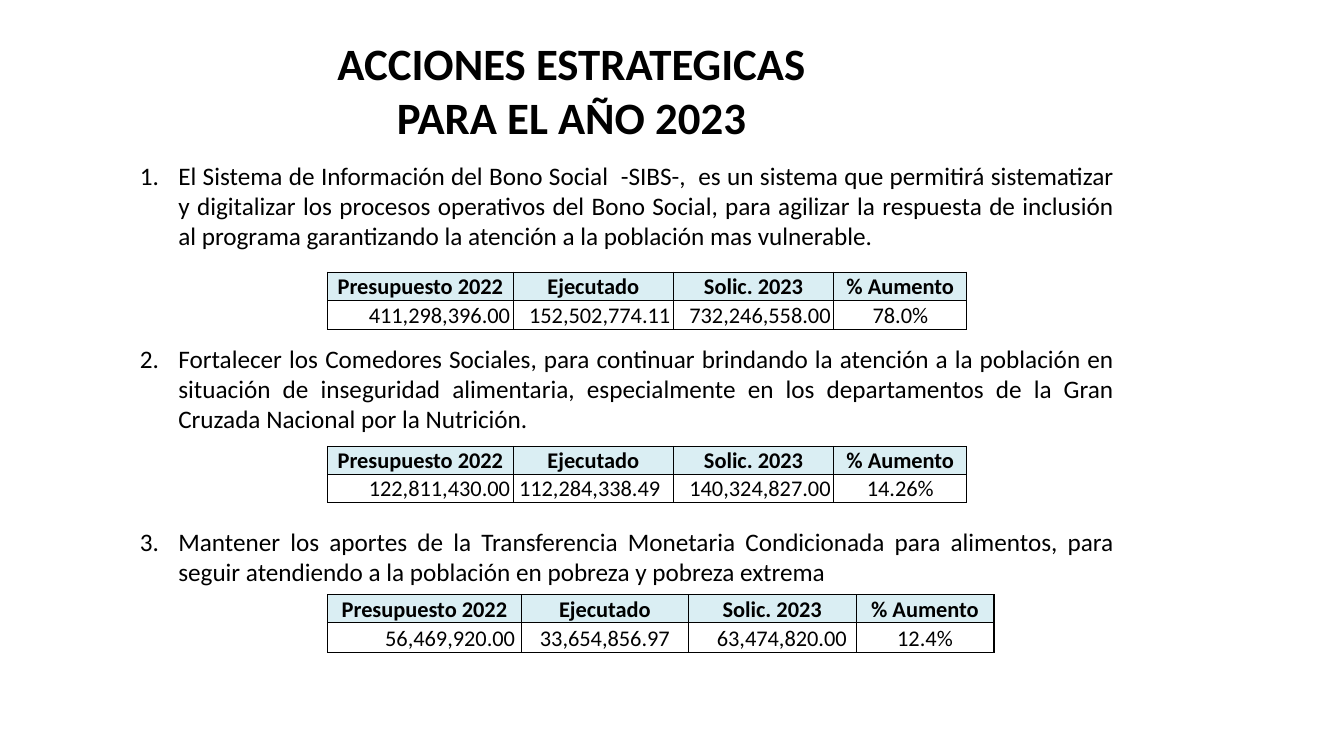
from dataclasses import dataclass

from lxml.etree import SubElement
from pptx import Presentation
from pptx.dml.color import RGBColor
from pptx.enum.text import MSO_ANCHOR, PP_ALIGN
from pptx.oxml.ns import qn
from pptx.util import Inches, Pt


@dataclass(frozen=True)
class Theme:
    font: str = "Calibri"
    ink: str = "000000"
    header_fill: str = "DAEEF3"
    title_size: int = 32
    action_size: int = 18
    table_size: int = 16
    outer_border: float = 1
    inner_border: float = 0.5


THEME = Theme()


def style_runs(paragraph, size, bold=False):
    for run in paragraph.runs:
        run.font.name = THEME.font
        run.font.size = Pt(size)
        run.font.bold = bold
        run.font.color.rgb = RGBColor.from_string(THEME.ink)


def add_borders(cell, outer_sides):
    properties = cell._tc.get_or_add_tcPr()
    for side in "LRTB":
        width = THEME.outer_border if side in outer_sides else THEME.inner_border
        border = SubElement(properties, qn(f"a:ln{side}"), w=str(Pt(width)))
        solid = SubElement(border, qn("a:solidFill"))
        SubElement(solid, qn("a:srgbClr"), val=THEME.ink)


deck = Presentation()
deck.slide_width = Inches(13.33)
deck.slide_height = Inches(7.5)
slide = deck.slides.add_slide(deck.slide_layouts[6])

title = slide.shapes.add_textbox(Inches(2.97), Inches(0.31), Inches(5.4), Inches(1.18)).text_frame
title.word_wrap = True
title.text = "ACCIONES ESTRATEGICAS PARA EL AÑO 2023"
title.paragraphs[0].alignment = PP_ALIGN.CENTER
style_runs(title.paragraphs[0], THEME.title_size, bold=True)

ACTIONS = [
    "El Sistema de Información del Bono Social  -SIBS-,  es un sistema que permitirá sistematizar y digitalizar "
    "los procesos operativos del Bono Social, para agilizar la respuesta de inclusión al programa garantizando "
    "la atención a la población mas vulnerable.",
    "Fortalecer los Comedores Sociales, para continuar brindando la atención a la población en situación de "
    "inseguridad alimentaria, especialmente en los departamentos de la Gran Cruzada Nacional por la Nutrición.",
    "Mantener los aportes de la Transferencia Monetaria Condicionada para alimentos, para seguir atendiendo "
    "a la población en pobreza y pobreza extrema",
]

actions = slide.shapes.add_textbox(Inches(1.29), Inches(1.54), Inches(9.86), Inches(5.25)).text_frame
actions.word_wrap = True
for index, wording in enumerate(ACTIONS):
    action = actions.paragraphs[0] if index == 0 else actions.add_paragraph()
    action.text = wording
    action.alignment = PP_ALIGN.JUSTIFY
    if index:
        action.space_before = Pt(66)
    properties = action._p.get_or_add_pPr()
    properties.set("marL", str(Inches(0.38)))
    properties.set("indent", str(Inches(-0.38)))
    SubElement(properties, qn("a:buFont"), typeface="+mj-lt")
    SubElement(properties, qn("a:buAutoNum"), type="arabicPeriod")
    style_runs(action, THEME.action_size)

HEADERS = ["Presupuesto 2022", "Ejecutado", "Solic. 2023", "% Aumento"]
NARROW_COLUMNS = [1.84, 1.59, 1.59, 1.32]
WIDE_COLUMNS = [1.92, 1.66, 1.66, 1.37]
CENTERED = None
BUDGETS = [
    (2.7, NARROW_COLUMNS, [0.27, 0.29],
     ["411,298,396.00", "152,502,774.11", "732,246,558.00", "78.0%"], [0.03, 0.03, 0.03, CENTERED]),
    (4.43, NARROW_COLUMNS, [0.26, 0.27],
     ["122,811,430.00", "112,284,338.49", "140,324,827.00", "14.26%"], [0.03, 0.13, 0.03, CENTERED]),
    (5.9, WIDE_COLUMNS, [0.27, 0.3],
     ["56,469,920.00", "33,654,856.97", "63,474,820.00", "12.4%"], [0.06, CENTERED, 0.09, CENTERED]),
]

for top, widths, heights, amounts, right_insets in BUDGETS:
    budget = slide.shapes.add_table(
        2, len(HEADERS), Inches(3.25), Inches(top), Inches(sum(widths)), Inches(sum(heights))
    ).table
    for column, width in zip(budget.columns, widths):
        column.width = Inches(width)
    for row, height in zip(budget.rows, heights):
        row.height = Inches(height)
    for row_index, values in enumerate([HEADERS, amounts]):
        is_header = row_index == 0
        for column_index, value in enumerate(values):
            cell = budget.cell(row_index, column_index)
            inset = CENTERED if is_header else right_insets[column_index]
            cell.text_frame.text = value
            cell.vertical_anchor = MSO_ANCHOR.BOTTOM
            cell.margin_left = cell.margin_top = Inches(0.01)
            cell.margin_right = Inches(0.01 if inset is CENTERED else inset)
            cell.margin_bottom = 0
            paragraph = cell.text_frame.paragraphs[0]
            paragraph.alignment = PP_ALIGN.CENTER if inset is CENTERED else PP_ALIGN.RIGHT
            style_runs(paragraph, THEME.table_size, bold=is_header)
            outer_sides = "T" if is_header else "B"
            if column_index == 0:
                outer_sides += "L"
            if column_index == len(HEADERS) - 1:
                outer_sides += "R"
            add_borders(cell, outer_sides)
            if is_header:
                cell.fill.solid()
                cell.fill.fore_color.rgb = RGBColor.from_string(THEME.header_fill)
            else:
                cell.fill.background()

deck.save("out.pptx")
